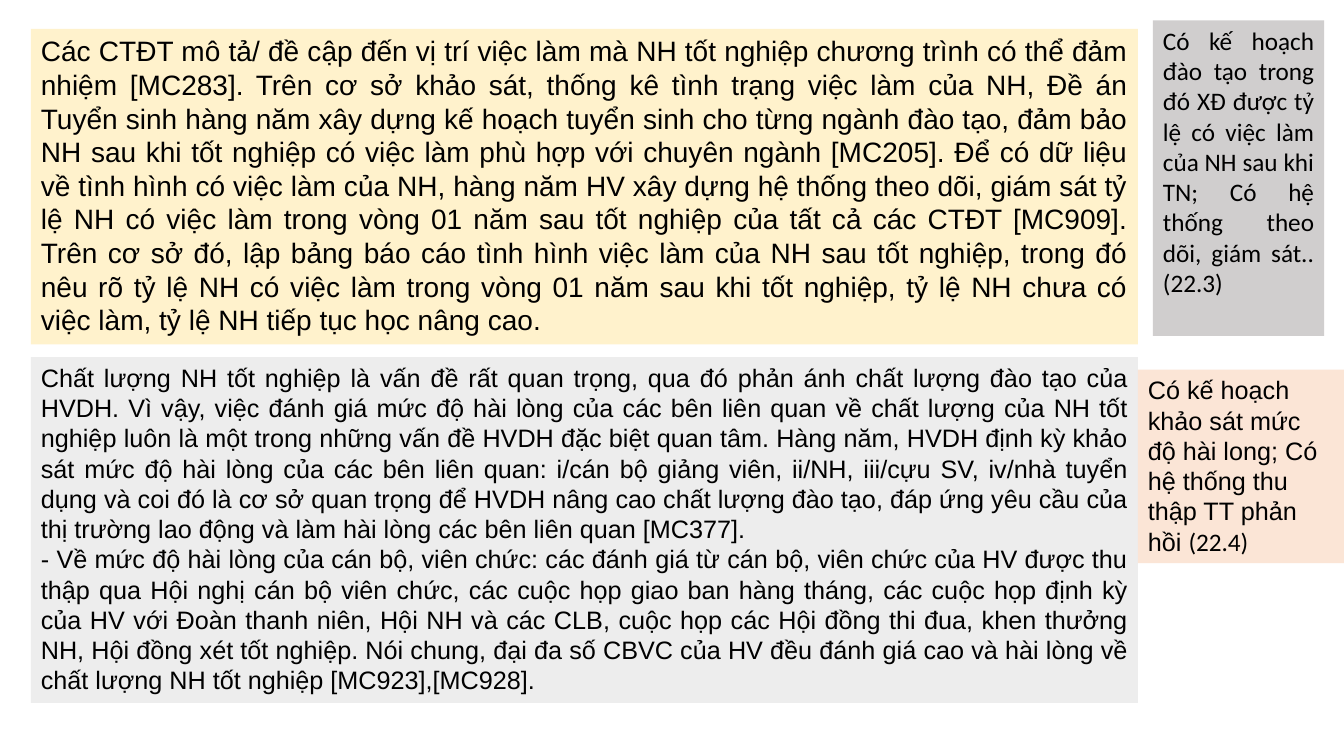
import pptx
import pptx.util
from pptx.dml.color import RGBColor
from pptx.enum.shapes import MSO_SHAPE
from pptx.enum.text import MSO_ANCHOR, PP_ALIGN

BLACK = RGBColor(0x00, 0x00, 0x00)
CREAM = RGBColor(0xFF, 0xF2, 0xCC)
LIGHT_GREY = RGBColor(0xED, 0xED, 0xED)
GREY = RGBColor(0xD0, 0xCE, 0xCE)
PEACH = RGBColor(0xFB, 0xE5, 0xD6)

SLIDE_WIDTH = pptx.util.Inches(13.33)
SLIDE_HEIGHT = pptx.util.Inches(7.5)

# Main column: left edge and width in percent of the slide's width
MAIN_LEFT, MAIN_WIDTH = 2.3, 82.37
NOTE_LEFT = MAIN_LEFT + MAIN_WIDTH

EMPLOYMENT = (
    "Các CTĐT mô tả/ đề cập đến vị trí việc làm mà NH tốt nghiệp chương trình có thể "
    "đảm nhiệm [MC283]. Trên cơ sở khảo sát, thống kê tình trạng việc làm của NH, Đề án "
    "Tuyển sinh hàng năm xây dựng kế hoạch tuyển sinh cho từng ngành đào tạo, đảm bảo NH "
    "sau khi tốt nghiệp có việc làm phù hợp với chuyên ngành [MC205]. Để có dữ liệu về "
    "tình hình có việc làm của NH, hàng năm HV xây dựng hệ thống theo dõi, giám sát tỷ lệ "
    "NH có việc làm trong vòng 01 năm sau tốt nghiệp của tất cả các CTĐT [MC909]. Trên cơ "
    "sở đó, lập bảng báo cáo tình hình việc làm của NH sau tốt nghiệp, trong đó nêu rõ tỷ "
    "lệ NH có việc làm trong vòng 01 năm sau khi tốt nghiệp, tỷ lệ NH chưa có việc làm, "
    "tỷ lệ NH tiếp tục học nâng cao."
)
SATISFACTION = (
    "Chất lượng NH tốt nghiệp là vấn đề rất quan trọng, qua đó phản ánh chất lượng đào "
    "tạo của HVDH. Vì vậy, việc đánh giá mức độ hài lòng của các bên liên quan về chất "
    "lượng của NH tốt nghiệp luôn là một trong những vấn đề HVDH đặc biệt quan tâm. Hàng "
    "năm, HVDH định kỳ khảo sát mức độ hài lòng của các bên liên quan: i/cán bộ giảng "
    "viên, ii/NH, iii/cựu SV, iv/nhà tuyển dụng và coi đó là cơ sở quan trọng để HVDH "
    "nâng cao chất lượng đào tạo, đáp ứng yêu cầu của thị trường lao động và làm hài lòng "
    "các bên liên quan [MC377]."
)
STAFF_VIEW = (
    "- Về mức độ hài lòng của cán bộ, viên chức: các đánh giá từ cán bộ, viên chức của HV "
    "được thu thập qua Hội nghị cán bộ viên chức, các cuộc họp giao ban hàng tháng, các "
    "cuộc họp định kỳ của HV với Đoàn thanh niên, Hội NH và các CLB, cuộc họp các Hội "
    "đồng thi đua, khen thưởng NH, Hội đồng xét tốt nghiệp. Nói chung, đại đa số CBVC của "
    "HV đều đánh giá cao và hài lòng về chất lượng NH tốt nghiệp [MC923],[MC928]."
)
PLAN_NOTE = (
    "Có kế hoạch đào tạo trong đó XĐ được tỷ lệ có việc làm của NH sau khi TN; "
    "Có hệ thống theo dõi, giám sát.. (22.3)"
)
SURVEY_NOTE = "Có kế hoạch khảo sát mức độ hài long; Có hệ thống thu thập TT phản hồi "


def add_panel(slide, left, top, width, height, fill):
    """Add a plain filled panel placed in percent of the slide; return its text frame."""
    panel = slide.shapes.add_shape(
        MSO_SHAPE.RECTANGLE,
        round(SLIDE_WIDTH * left / 100), round(SLIDE_HEIGHT * top / 100),
        round(SLIDE_WIDTH * width / 100), round(SLIDE_HEIGHT * height / 100))
    panel.shadow.inherit = False
    panel.fill.solid()
    panel.fill.fore_color.rgb = fill
    panel.line.fill.background()
    panel.text_frame.word_wrap = True
    panel.text_frame.vertical_anchor = MSO_ANCHOR.TOP
    return panel.text_frame


def style_paragraph(paragraph, size, align, font=None):
    paragraph.alignment = align
    paragraph.font.size = pptx.util.Pt(size)
    paragraph.font.color.rgb = BLACK
    paragraph.font.name = font


def write_justified(frame, texts, size, font):
    frame.text = "\n".join(texts)
    for paragraph in frame.paragraphs:
        style_paragraph(paragraph, size, PP_ALIGN.JUSTIFY, font)


def write_mixed(frame, pieces, size):
    """Write one left-aligned paragraph from (text, font) pieces."""
    paragraph = frame.paragraphs[0]
    style_paragraph(paragraph, size, PP_ALIGN.LEFT)
    for text, font in pieces:
        piece = paragraph.add_run()
        piece.text = text
        piece.font.name = font


def main():
    deck = pptx.Presentation()
    deck.slide_width, deck.slide_height = SLIDE_WIDTH, SLIDE_HEIGHT
    slide = deck.slides.add_slide(deck.slide_layouts[6])

    # Main column
    employment = add_panel(slide, MAIN_LEFT, 3.83, MAIN_WIDTH, 41.73, CREAM)
    write_justified(employment, [EMPLOYMENT], 20, "Arial")
    satisfaction = add_panel(slide, MAIN_LEFT, 47.25, MAIN_WIDTH, 45.73, LIGHT_GREY)
    write_justified(satisfaction, [SATISFACTION, STAFF_VIEW], 18, "Arial")

    # Side notes
    plan_note = add_panel(slide, 85.79, 2.7, 12.73, 41.73, GREY)
    write_justified(plan_note, [PLAN_NOTE], 18, "Calibri")
    survey_note = add_panel(slide, NOTE_LEFT, 48.9, 100 - NOTE_LEFT, 25.6, PEACH)
    write_mixed(survey_note, [(SURVEY_NOTE, "Arial"), ("(22.4)", "Calibri")], 18)

    deck.save("out.pptx")


if __name__ == "__main__":
    main()
